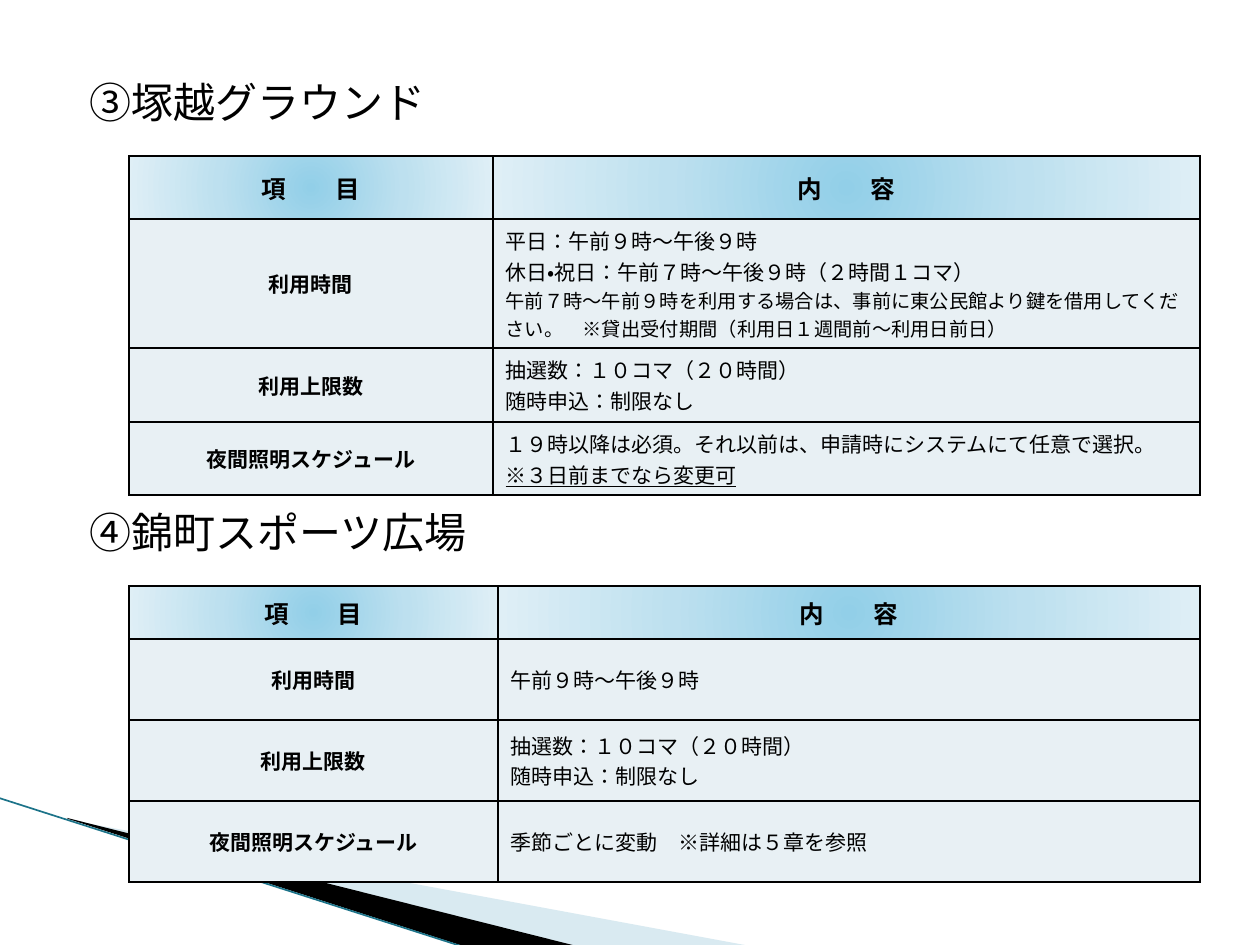
from lxml import etree
from pptx import Presentation
from pptx.dml.color import RGBColor
from pptx.enum.lang import MSO_LANGUAGE_ID as Lang
from pptx.enum.shapes import MSO_CONNECTOR as Connector
from pptx.enum.text import MSO_ANCHOR as Anchor, PP_ALIGN as Align
from pptx.oxml import parse_xml
from pptx.oxml.ns import nsdecls, qn
from pptx.util import Emu, Pt

PX = 914400 // 126
FONT = "Courier New"
BLACK, CELL_FILL = "000000", "E8F0F4"
HEADER_STOPS = [(0, "92CFE8"), (50, "BDE0EF"), (100, "DFEFF6")]
HEADER = ("項　　目", "内　　容")
TABLE_LEFT = 129

# Each content line is (text, size in points, underlined).
LIMIT_ROW = ("利用上限数", [("抽選数：１０コマ（２０時間）", 12, False),
                       ("随時申込：制限なし", 12, False)])
FACILITIES = [
    {
        "title": "④錦町スポーツ広場", "title_box": (62, 506, 459, 52),
        "top": 586, "columns": (369, 702), "rows": (53, 81, 81, 81),
        "items": [
            ("利用時間", [("午前９時～午後９時", 12, False)]),
            LIMIT_ROW,
            ("夜間照明スケジュール", [("季節ごとに変動　※詳細は５章を参照", 12, False)]),
        ],
    },
    {
        "title": "③塚越グラウンド", "title_box": (62, 76, 403, 52),
        "top": 156, "columns": (364, 707), "rows": (63, 129, 74, 73),
        "items": [
            ("利用時間", [
                ("平日：午前９時～午後９時", 12, False),
                ("休日・祝日：午前７時～午後９時（２時間１コマ）", 12, False),
                ("午前７時～午前９時を利用する場合は、事前に東公民館より鍵を借用してください。"
                 "　※貸出受付期間（利用日１週間前～利用日前日）", 11, False),
            ]),
            LIMIT_ROW,
            ("夜間照明スケジュール", [
                ("１９時以降は必須。それ以前は、申請時にシステムにて任意で選択。", 12, False),
                ("※３日前までなら変更可", 12, True),
            ]),
        ],
    },
]

# Frame, corner points (which reach beyond the frame), colour, opacity in percent
SWOOSHES = [
    ((98, 689, 524, 199), [(69, 820), (750, 946), (575, 946), (69, 819)], "A0CBDC", 40),
    ((-8, 798, 524, 116), [(67, 818), (576, 946), (469, 948), (68, 819)], BLACK, 100),
]
SWOOSH_EDGE = (-1, 798, 467, 948)


def px(*lengths):
    return [Emu(length * PX) for length in lengths]


def rgb(color):
    return RGBColor.from_string(color)


def add_text(paragraph, text, size, bold=False, underline=False):
    run = paragraph.add_run()
    run.text = text
    font = run.font
    font.name, font.size, font.bold = FONT, Pt(size), bold
    font.color.rgb = rgb(BLACK)
    font.language_id = Lang.JAPANESE
    if underline:
        font.underline = True


def set_frame(outline, frame, points):
    """Give the outline a frame of its own while its corners stay in place."""
    left, top, width, height = frame
    outline.left, outline.top, outline.width, outline.height = px(*frame)
    track = outline._element.find(".//" + qn("a:path"))
    track.set("w", str(width))
    track.set("h", str(height))
    for corner, (x, y) in zip(track.iter(qn("a:pt")), points):
        corner.set("x", str(x - left))
        corner.set("y", str(y - top))


def add_swoosh(shapes, frame, points, color, opacity):
    builder = shapes.build_freeform(*points[0], scale=PX)
    builder.add_line_segments(points[1:], close=False)
    swoosh = builder.convert_to_shape()
    set_frame(swoosh, frame, points)
    swoosh.shadow.inherit = False
    swoosh.fill.solid()
    swoosh.fill.fore_color.rgb = rgb(color)
    swoosh.line.fill.background()
    if opacity < 100:
        tint = swoosh.fill._xPr.find(".//" + qn("a:srgbClr"))
        etree.SubElement(tint, qn("a:alpha"), val=str(opacity * 1000))


def add_swoosh_edge(shapes):
    edge = shapes.add_connector(Connector.STRAIGHT, *px(*SWOOSH_EDGE))
    edge.line.color.rgb = rgb("1C7389")
    edge.line.width = Pt(0.95)
    etree.SubElement(edge._element.spPr, qn("a:effectLst"))


def add_title(shapes, title, box):
    frame = shapes.add_textbox(*px(*box)).text_frame
    frame.word_wrap = True
    frame.vertical_anchor = Anchor.MIDDLE
    paragraph = frame.paragraphs[0]
    properties = paragraph._p.get_or_add_pPr()
    properties.set("marL", str(50 * PX))
    properties.set("indent", str(-35 * PX))
    add_text(paragraph, title, 24)


def add_borders(cell):
    for side in ("lnL", "lnR", "lnT", "lnB"):
        cell._tc.get_or_add_tcPr().append(parse_xml(
            f'<a:{side} {nsdecls("a")} w="{Pt(1)}"><a:solidFill>'
            f'<a:srgbClr val="{BLACK}"/></a:solidFill></a:{side}>'))


def fill_header(cell):
    """Fill with a gradient that spreads from the cell's middle."""
    stops = "".join(f'<a:gs pos="{at * 1000}"><a:srgbClr val="{color}"/></a:gs>'
                    for at, color in HEADER_STOPS)
    cell._tc.get_or_add_tcPr().append(parse_xml(
        f'<a:gradFill {nsdecls("a")} rotWithShape="1"><a:gsLst>{stops}</a:gsLst>'
        '<a:path path="circle"><a:fillToRect l="50000" t="50000" r="50000" b="50000"/>'
        '</a:path></a:gradFill>'))


def fill_cell(cell, lines, label=False, header=False):
    add_borders(cell)
    if header:
        fill_header(cell)
    else:
        cell.fill.solid()
        cell.fill.fore_color.rgb = rgb(CELL_FILL)
    cell.vertical_anchor = Anchor.MIDDLE
    frame = cell.text_frame
    for number, (text, size, underline) in enumerate(lines):
        paragraph = frame.add_paragraph() if number else frame.paragraphs[0]
        paragraph.alignment = Align.CENTER if label else Align.LEFT
        add_text(paragraph, text, size, label, underline)


def add_facility_table(shapes, facility):
    columns, rows = facility["columns"], facility["rows"]
    table = shapes.add_table(
        len(rows), len(columns),
        *px(TABLE_LEFT, facility["top"], sum(columns), sum(rows))).table
    for column, width in zip(table.columns, px(*columns)):
        column.width = width
    for row, height in zip(table.rows, px(*rows)):
        row.height = height
    for column, heading in enumerate(HEADER):
        fill_cell(table.cell(0, column), [(heading, 14, False)], label=True, header=True)
    for row, (item, lines) in enumerate(facility["items"], 1):
        fill_cell(table.cell(row, 0), [(item, 12, False)], label=True)
        fill_cell(table.cell(row, 1), lines)


def main():
    deck = Presentation()
    deck.slide_width, deck.slide_height = px(1260, 945)
    shapes = deck.slides.add_slide(deck.slide_layouts[6]).shapes
    for swoosh in SWOOSHES:
        add_swoosh(shapes, *swoosh)
    add_swoosh_edge(shapes)
    for facility in FACILITIES:
        add_title(shapes, facility["title"], facility["title_box"])
        add_facility_table(shapes, facility)
    deck.save("out.pptx")


if __name__ == "__main__":
    main()
